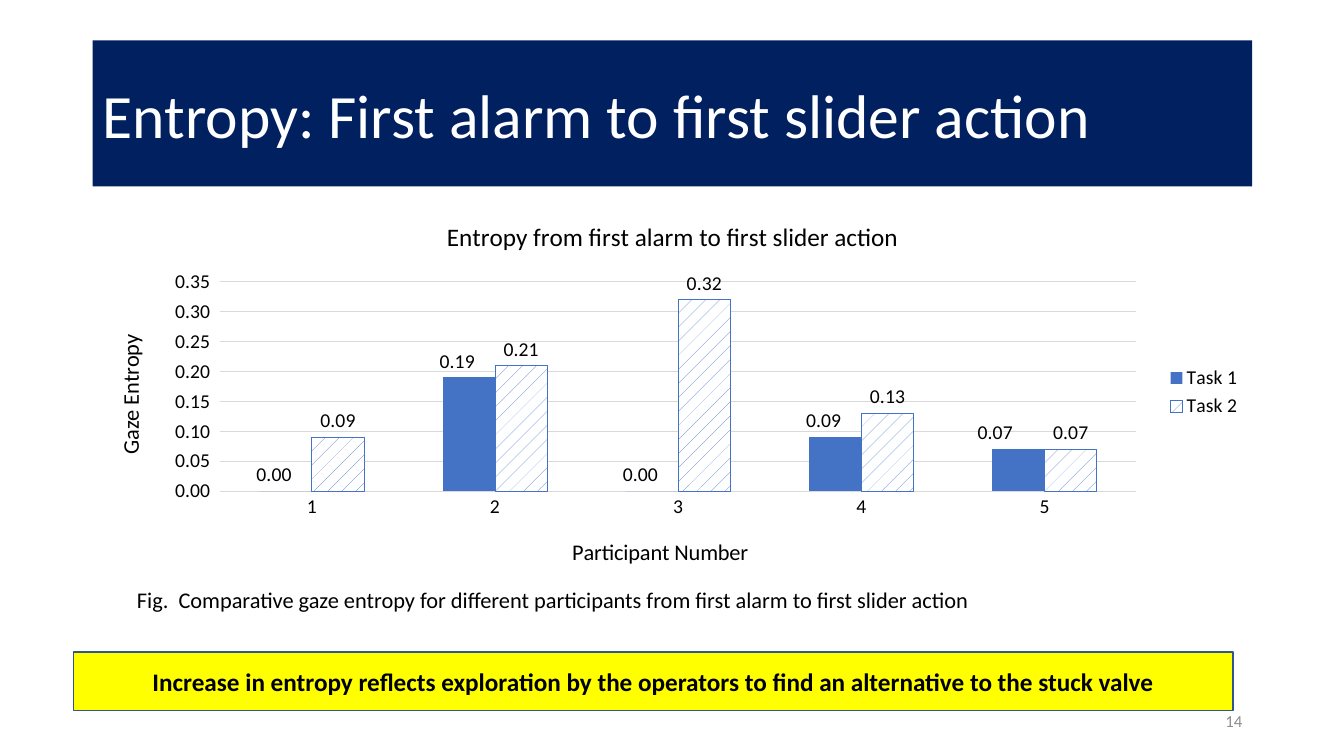
import pptx
import pptx.chart.data
import pptx.dml.color
import pptx.enum.chart
import pptx.enum.dml
import pptx.enum.shapes
import pptx.enum.text
import pptx.oxml
import pptx.oxml.ns
import pptx.util

Inches, Pt = pptx.util.Inches, pptx.util.Pt
ALIGN, ANCHOR = pptx.enum.text.PP_ALIGN, pptx.enum.text.MSO_ANCHOR
CH = pptx.enum.chart

# Content
COLORS = {"navy": "002060", "white": "FFFFFF", "black": "000000", "blue": "4472C4",
          "grid": "D9D9D9", "yellow": "FFFF00", "edge": "325491", "gray": "8C8C8C"}
FONT = "Calibri"
# text, box (left, top, width, height), fill, line, alignment, anchor, font format
BOXES = [
    ("Entropy: First alarm to first slider action", (0.92, 0.4, 11.5, 1.45), "navy", None,
     ALIGN.LEFT, ANCHOR.MIDDLE, {"size": 44, "color": "white"}),
    ("Fig.  Comparative gaze entropy for different participants from first alarm to first slider action",
     (1.26, 5.77, 10.81, 0.37), None, None, ALIGN.LEFT, ANCHOR.TOP, {"size": 16}),
    ("14", (9.42, 6.95, 3, 0.4), None, None, ALIGN.RIGHT, ANCHOR.MIDDLE,
     {"size": 12, "color": "gray"}),
    ("Increase in entropy reflects exploration by the operators to find an alternative to the stuck valve",
     (0.73, 6.47, 11.5, 0.58), "yellow", "edge", ALIGN.CENTER, ANCHOR.MIDDLE,
     {"size": 18, "bold": True}),
]
CHART_BOX = (0.92, 2, 11.5, 3.78)
CHART_TITLE = "Entropy from first alarm to first slider action"
AXIS_TITLES = {"category": "Participant Number", "value": "Gaze Entropy"}
PARTICIPANTS = ["1", "2", "3", "4", "5"]
ENTROPY = {"Task 1": (0, 0.19, 0, 0.09, 0.07), "Task 2": (0.09, 0.21, 0.32, 0.13, 0.07)}
# Shares of the chart's width and height
PLOT_AREA = {"x": 0.11, "y": 0.21, "w": 0.79, "h": 0.55}
CATEGORY_TITLE_AT = {"x": 0.41, "y": 0.87}
TASK_1_LABEL_SHIFTS = (-0.01, -0.01, -0.01, -0.01, -0.02)


def rgb(name):
    return pptx.dml.color.RGBColor.from_string(COLORS[name])


def style(font, size, color="black", bold=False):
    for key, value in {"name": FONT, "size": Pt(size), "bold": bold}.items():
        setattr(font, key, value)
    font.color.rgb = rgb(color)


def set_line(line, color, width):
    line.color.rgb = rgb(color)
    line.width = Pt(width)


def layout(modes, values):
    parts = [f'<c:{key} val="{mode}"/>' for key, mode in modes.items()]
    parts += [f'<c:{key} val="{value}"/>' for key, value in values.items()]
    return pptx.oxml.parse_xml(
        f'<c:layout {pptx.oxml.ns.nsdecls("c")}><c:manualLayout>{"".join(parts)}'
        '</c:manualLayout></c:layout>')


def place(element, new_layout, after=None):
    old = element.find(pptx.oxml.ns.qn("c:layout"))
    if old is not None:
        element.remove(old)
    index = 0 if after is None else element.index(element.find(pptx.oxml.ns.qn(after))) + 1
    element.insert(index, new_layout)


def set_title(owner, text, size):
    tf = (owner.chart_title if hasattr(owner, "chart_title") else owner.axis_title).text_frame
    tf.text = text
    style(tf.paragraphs[0].runs[0].font, size)


def add_box(slide, text, box, fill, line, align, anchor, font):
    place_at = [Inches(v) for v in box]
    if fill:
        sp = slide.shapes.add_shape(pptx.enum.shapes.MSO_SHAPE.RECTANGLE, *place_at)
        sp.shadow.inherit = False
        sp.fill.solid()
        sp.fill.fore_color.rgb = rgb(fill)
        if line:
            set_line(sp.line, line, 1)
        else:
            sp.line.fill.background()
    else:
        sp = slide.shapes.add_textbox(*place_at)
    tf = sp.text_frame
    tf.word_wrap = True
    tf.vertical_anchor = anchor
    p = tf.paragraphs[0]
    p.alignment = align
    r = p.add_run()
    r.text = text
    style(r.font, **font)


def add_entropy_chart(slide):
    data = pptx.chart.data.CategoryChartData(number_format="0.00")
    data.categories = PARTICIPANTS
    for name, values in ENTROPY.items():
        data.add_series(name, values)
    chart = slide.shapes.add_chart(CH.XL_CHART_TYPE.COLUMN_CLUSTERED,
                                   *[Inches(v) for v in CHART_BOX], data).chart
    style(chart.font, 10)
    chart.has_title = True
    set_title(chart, CHART_TITLE, 18)

    # Legend
    chart.has_legend = True
    chart.legend.position = CH.XL_LEGEND_POSITION.RIGHT
    chart.legend.include_in_layout = False
    style(chart.legend.font, 14)

    # Axes
    cat, val = chart.category_axis, chart.value_axis
    for axis, key in ((cat, "category"), (val, "value")):
        axis.has_title = True
        set_title(axis, AXIS_TITLES[key], 16)
        style(axis.tick_labels.font, 14)
    cat.major_tick_mark = CH.XL_TICK_MARK.NONE
    set_line(cat.format.line, "grid", 0.75)
    for key, value in {"minimum_scale": 0, "maximum_scale": 0.35, "major_unit": 0.05}.items():
        setattr(val, key, value)
    val.format.line.fill.background()
    val.tick_labels.number_format = "0.00"
    val.tick_labels.number_format_is_linked = False
    set_line(val.major_gridlines.format.line, "grid", 0.75)

    # Columns and their labels
    plot = chart.plots[0]
    for key, value in {"gap_width": 150, "overlap": 0, "vary_by_categories": False}.items():
        setattr(plot, key, value)
    for series in plot.series:
        labels = series.data_labels
        for key, value in {"show_value": True, "number_format": "0.00",
                           "number_format_is_linked": False,
                           "position": CH.XL_LABEL_POSITION.OUTSIDE_END}.items():
            setattr(labels, key, value)
        style(labels.font, 14)
    task_1, task_2 = plot.series
    task_1.format.fill.solid()
    task_1.format.fill.fore_color.rgb = rgb("blue")
    hatch = task_2.format.fill
    hatch.patterned()
    hatch.pattern = pptx.enum.dml.MSO_PATTERN.PERCENT_5
    hatch.fore_color.rgb = rgb("blue")
    hatch.back_color.rgb = rgb("white")
    set_line(task_2.format.line, "blue", 0.75)
    for i, shift in enumerate(TASK_1_LABEL_SHIFTS):
        label = task_1.points[i].data_label
        label.position = CH.XL_LABEL_POSITION.OUTSIDE_END
        style(label.font, 14)
        dLbl = task_1.data_labels._element.findall(pptx.oxml.ns.qn("c:dLbl"))[i]
        place(dLbl, layout({}, {"x": shift, "y": 0}), after="c:idx")

    # Placement inside the chart
    edges = {"xMode": "edge", "yMode": "edge"}
    plot_area = chart._chartSpace.chart.plotArea
    place(plot_area, layout({"layoutTarget": "inner", **edges}, PLOT_AREA))
    place(cat.axis_title._element, layout(edges, CATEGORY_TITLE_AT), after="c:tx")


def main():
    prs = pptx.Presentation()
    prs.slide_width, prs.slide_height = Inches(13.33), Inches(7.5)
    slide = prs.slides.add_slide(prs.slide_layouts[6])
    add_entropy_chart(slide)
    for box in BOXES:
        add_box(slide, *box)
    prs.save("out.pptx")


if __name__ == "__main__":
    main()
